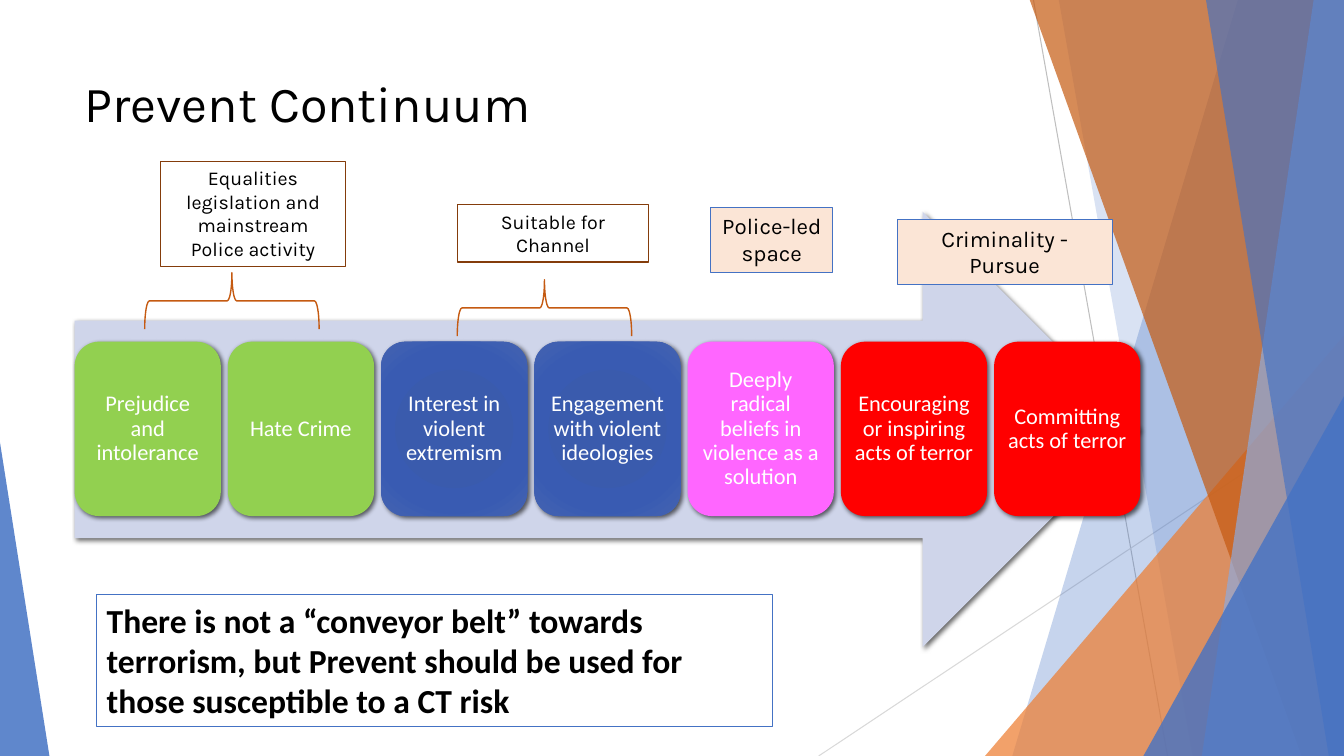
from lxml import etree
from pptx import Presentation
from pptx.dml.color import RGBColor
from pptx.enum.shapes import MSO_CONNECTOR, MSO_SHAPE
from pptx.enum.text import MSO_ANCHOR, MSO_AUTO_SIZE, PP_ALIGN
from pptx.oxml import parse_xml
from pptx.oxml.ns import nsdecls, qn
from pptx.util import Inches, Pt

COLORS = {
    "blue": "4472C4", "pale_blue": "8FAADC", "orange": "ED7D31", "rust": "C55A11",
    "brown": "843C0B", "peach": "FBE5D6", "arrow": "CFD5EA", "green": "92D050",
    "pink": "FF66FF", "red": "FF0000", "white": "FFFFFF", "black": "000000",
    "gray": "BFBFBF", "light_gray": "D9D9D9",
}
CHANNEL_STOPS = [(0, "3759AE"), (34, "3A5BAD"), (70, "395BB2"), (100, "4564B1")]

STAGES = [
    ("Prejudice and intolerance", "green"),
    ("Hate Crime", "green"),
    ("Interest in violent extremism", "channel"),
    ("Engagement with violent ideologies", "channel"),
    ("Deeply radical beliefs in violence as a solution", "pink"),
    ("Encouraging or inspiring acts of terror", "red"),
    ("Committing acts of terror", "red"),
]
BACKDROP_LINES = [
    ((10.25, 0), (11.58, 7.5), "gray"),
    ((13.33, 4.03), (8.12, 7.5), "light_gray"),
]
TOP, RIGHT, BOTTOM = -0.01, 13.33, 7.5
BACKDROP = [
    ("band", (12.28, 10.04), "blue", 30),
    ("band", (10.5, 11.83), "blue", 20),
    ("triangle", (9.77, 3.33, 3.56, 4.17, 1), "orange", 72),
    ("band", (10.21, 12.91), "rust", 70),
    ("band", (13.03, 11.92), "pale_blue", 70),
    ("band", (11.96, 13.18), "blue", 65),
    ("triangle", (11.34, 3.93, 1.99, 3.57, 1), "blue", 80),
    ("triangle", (0, 4.39, 0.49, 3.11, 0), "blue", 85),
]
LABELS = [
    ("Suitable for Channel", (4.54, 2.03, 1.89, 0.57), 14, None, "brown"),
    ("Criminality - Pursue", (8.9, 2.18, 2.13, 0.64), 16, "peach", "blue"),
    ("Police-led space", (7.05, 2.06, 1.21, 0.64), 16, "peach", "blue"),
    ("Equalities legislation and mainstream Police activity",
     (1.59, 1.6, 1.84, 1.04), 14, None, "brown"),
]


class SlideBuilder:
    def __init__(self, presentation):
        self.slide = presentation.slides.add_slide(presentation.slide_layouts[5])
        self.shapes = self.slide.shapes

    def color(self, name):
        return RGBColor.from_string(COLORS[name])

    def paint(self, shape, fill=None, line=None, width=0.75, alpha=None):
        shape.shadow.inherit = False
        if fill:
            shape.fill.solid()
            shape.fill.fore_color.rgb = self.color(fill)
        else:
            shape.fill.background()
        if alpha:
            fill_color = shape._element.spPr.find(qn("a:solidFill"))[0]
            etree.SubElement(fill_color, qn("a:alpha"), val=str(alpha * 1000))
        if line:
            shape.line.color.rgb = self.color(line)
            shape.line.width = Pt(width)
        else:
            shape.line.fill.background()

    def preset(self, kind, box, **style):
        shape = self.shapes.add_shape(kind, *map(Inches, box))
        self.paint(shape, **style)
        return shape

    def text(self, frame, words, size, font, color, align, bold=False):
        frame.word_wrap = True
        paragraph = frame.paragraphs[0]
        paragraph.text = words
        paragraph.alignment = align
        paragraph.font.size = Pt(size)
        paragraph.font.name = font
        paragraph.font.bold = bold
        paragraph.font.color.rgb = self.color(color)
        return paragraph

    def title(self, words, box):
        shape = self.shapes.title
        shape.left, shape.top, shape.width, shape.height = map(Inches, box)
        self.shapes._spTree.append(shape._element)
        shape.text_frame.vertical_anchor = MSO_ANCHOR.TOP
        self.text(shape.text_frame, words, 36, "Karla", "black", PP_ALIGN.LEFT)

    def line(self, start, end, color):
        connector = self.shapes.add_connector(
            MSO_CONNECTOR.STRAIGHT, *map(Inches, start + end))
        connector.line.color.rgb = self.color(color)
        connector.line.width = Pt(0.75)
        etree.SubElement(connector._element.spPr, qn("a:effectLst"))

    def band(self, top_x, bottom_x, fill, alpha):
        corners = [(RIGHT, TOP), (RIGHT, BOTTOM), (bottom_x, BOTTOM)]
        builder = self.shapes.build_freeform(Inches(top_x), Inches(TOP))
        builder.add_line_segments([(Inches(x), Inches(y)) for x, y in corners])
        self.paint(builder.convert_to_shape(), fill=fill, alpha=alpha)

    def triangle(self, left, top, width, height, apex, fill, alpha):
        shape = self.preset(MSO_SHAPE.ISOSCELES_TRIANGLE, (left, top, width, height),
                            fill=fill, alpha=alpha)
        shape.adjustments[0] = apex

    def shadow(self, shape, blur):
        effects = shape._element.spPr.find(qn("a:effectLst"))
        effects.append(parse_xml(
            f'<a:outerShdw {nsdecls("a")} blurRad="{Pt(blur)}" dist="{Pt(2)}" '
            'dir="2700000" algn="ctr" rotWithShape="0"><a:srgbClr val="000000">'
            '<a:alpha val="60000"/></a:srgbClr></a:outerShdw>'))

    def radial_fill(self, shape, stops):
        stop_xml = "".join(
            f'<a:gs pos="{position * 1000}"><a:srgbClr val="{value}"/></a:gs>'
            for position, value in stops)
        properties = shape._element.spPr
        properties.replace(properties.find(qn("a:noFill")), parse_xml(
            f'<a:gradFill {nsdecls("a")} rotWithShape="1"><a:gsLst>{stop_xml}</a:gsLst>'
            '<a:path path="circle"><a:fillToRect l="100000" t="100000" r="100000" '
            'b="100000"/></a:path></a:gradFill>'))

    def arrow(self, box):
        self.shadow(self.preset(MSO_SHAPE.RIGHT_ARROW, box, fill="arrow"), 3)

    def stage(self, box, words, fill):
        is_channel = fill == "channel"
        shape = self.preset(MSO_SHAPE.ROUNDED_RECTANGLE, box,
                            fill=None if is_channel else fill)
        if is_channel:
            self.radial_fill(shape, CHANNEL_STOPS)
        self.shadow(shape, 3.5)
        frame = shape.text_frame
        frame.margin_left = frame.margin_right = Inches(0.06)
        frame.margin_top = frame.margin_bottom = Inches(0.06)
        frame.vertical_anchor = MSO_ANCHOR.MIDDLE
        paragraph = self.text(frame, words, 16, "Calibri", "white", PP_ALIGN.CENTER)
        paragraph.line_spacing = 0.9

    def brace(self, box):
        self.preset(MSO_SHAPE.LEFT_BRACE, box, line="rust", width=1).rotation = 90

    def label(self, words, box, size, fill, line, font="Karla",
              align=PP_ALIGN.CENTER, bold=False):
        shape = self.preset(MSO_SHAPE.RECTANGLE, box, fill=fill, line=line)
        frame = shape.text_frame
        frame.vertical_anchor = MSO_ANCHOR.TOP
        frame.auto_size = MSO_AUTO_SIZE.SHAPE_TO_FIT_TEXT
        self.text(frame, words, size, font, "black", align, bold)


def main():
    presentation = Presentation()
    presentation.slide_width = Inches(13.33)
    presentation.slide_height = Inches(7.5)
    builder = SlideBuilder(presentation)

    for start, end, color in BACKDROP_LINES:
        builder.line(start, end, color)
    for kind, geometry, fill, alpha in BACKDROP:
        draw = builder.band if kind == "band" else builder.triangle
        draw(*geometry, fill, alpha)

    builder.title("Prevent Continuum", (0.74, 0.67, 9.4, 1.44))
    builder.arrow((0.74, 2.1, 10.57, 4.32))
    for index, (words, fill) in enumerate(STAGES):
        builder.stage((0.74 + 1.52 * index, 3.39, 1.45, 1.73), words, fill)
    for left, top in [(5.12, 2.19), (2.02, 2.12)]:
        builder.brace((left, top, 0.56, 1.73))
    for label in LABELS:
        builder.label(*label)
    builder.label(
        "There is not a “conveyor belt” towards terrorism, but Prevent should be "
        "used for those susceptible to a CT risk",
        (0.96, 5.9, 6.7, 1.31), 24, None, "blue", "Calibri", PP_ALIGN.LEFT, True)

    presentation.save("out.pptx")


if __name__ == "__main__":
    main()
